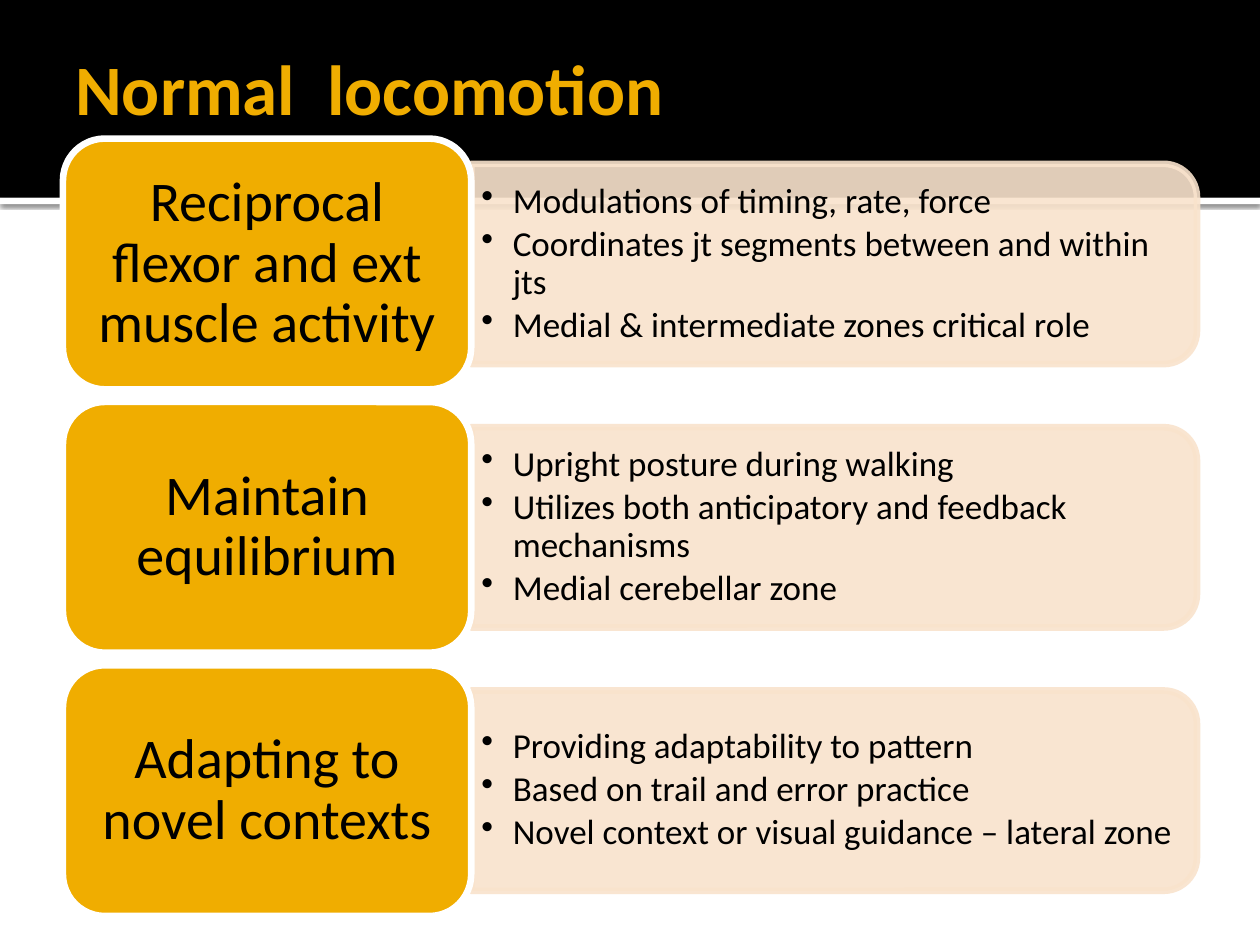
import pptx
import pptx.dml.color
import pptx.enum.shapes
import pptx.enum.text
import pptx.oxml
import pptx.oxml.ns
import pptx.util
from pptx.util import Inches

COLORS = {"black": "000000", "white": "FFFFFF", "gold": "F0AD00", "peach": "F9E3CC"}
SHAPES = pptx.enum.shapes.MSO_SHAPE
ALIGN = pptx.enum.text.PP_ALIGN
NAMESPACE = pptx.oxml.ns.nsdecls("a")
ROWS = [
    ("Reciprocal flexor and ext muscle activity",
     ["Modulations of timing, rate, force",
      "Coordinates jt segments between and within jts",
      "Medial & intermediate zones critical role"]),
    ("Maintain equilibrium",
     ["Upright posture during walking",
      "Utilizes both anticipatory and feedback mechanisms",
      "Medial cerebellar zone"]),
    ("Adapting to novel contexts",
     ["Providing adaptability to pattern",
      "Based on trail and error practice",
      "Novel context or visual guidance – lateral zone"]),
]


def rgb(name):
    """Return the named colour."""
    return pptx.dml.color.RGBColor.from_string(COLORS[name])


def write_text(shape, lines, *, size, insets, color="black", bold=False,
               align=ALIGN.LEFT, spacing=1.0, after=0, bullets=False):
    """Write one formatted paragraph per line into a shape."""
    frame = shape.text_frame
    frame.word_wrap = True
    frame.vertical_anchor = pptx.enum.text.MSO_ANCHOR.MIDDLE
    frame.margin_left, frame.margin_top, frame.margin_right, frame.margin_bottom = map(Inches, insets)
    for index, line in enumerate(lines):
        para = frame.add_paragraph() if index else frame.paragraphs[0]
        para.alignment = align
        para.line_spacing = spacing
        para.space_after = pptx.util.Pt(after)
        if bullets:
            para.level = 1
            properties = para._p.get_or_add_pPr()
            properties.set("marL", str(Inches(0.25)))
            properties.set("indent", str(Inches(-0.25)))
            properties.append(pptx.oxml.parse_xml(f'<a:buChar {NAMESPACE} char="•"/>'))
        span = para.add_run()
        span.text = line
        span.font.name = "Calibri"
        span.font.size = pptx.util.Pt(size)
        span.font.bold = bold
        span.font.color.rgb = rgb(color)


def add_box(slide, kind, left, top, width, height, fill, line=None):
    """Add a filled preset shape with no shadow and an optional outline."""
    box = slide.shapes.add_shape(kind, left, top, width, height)
    box.shadow.inherit = False
    box.fill.solid()
    box.fill.fore_color.rgb = rgb(fill)
    if line:
        box.line.color.rgb = rgb(line)
        box.line.width = pptx.util.Pt(3.78)
    else:
        box.line.fill.background()
    return box


def add_header(slide, left, top, width, height):
    """Draw the black title band, its shadowed white edge and the title."""
    edge = add_box(slide, SHAPES.RECTANGLE, left, top + height, width, Inches(0.05), "white")
    effects = edge._element.spPr.find(pptx.oxml.ns.qn("a:effectLst"))
    effects.append(pptx.oxml.parse_xml(
        f'<a:outerShdw {NAMESPACE} blurRad="{pptx.util.Pt(2.5)}" dist="{pptx.util.Pt(0.8)}" '
        f'dir="5400000" rotWithShape="0"><a:srgbClr val="{COLORS["black"]}">'
        '<a:alpha val="60000"/></a:srgbClr></a:outerShdw>'))
    add_box(slide, SHAPES.RECTANGLE, left, top, width, height, "black")
    title = slide.shapes.add_textbox(left + Inches(0.5), top + Inches(0.3),
                                     width - Inches(1), Inches(0.79))
    write_text(title, ["Normal  locomotion"], size=40.5, color="gold", bold=True,
               insets=(0.1, 0.05, 0.05, 0.05))


def add_panel(slide, left, top, width, height, points):
    """Draw a panel rounded on its right side, with bullet points over it."""
    panel = add_box(slide, SHAPES.ROUND_2_SAME_RECTANGLE,
                    left + (width - height) // 2, top + (height - width) // 2,
                    height, width, "peach", "peach")
    panel.rotation = 90
    for color in panel._element.spPr.iter(pptx.oxml.ns.qn("a:srgbClr")):
        color.append(pptx.oxml.parse_xml(f'<a:alpha {NAMESPACE} val="90000"/>'))
    inset = Inches(0.08)
    body = slide.shapes.add_textbox(left, top + inset, width - inset, height - 2 * inset)
    write_text(body, points, size=20, insets=(0.08, 0.04, 0.08, 0.04),
               spacing=0.9, after=3, bullets=True)


def add_row(slide, left, top, width, height, heading, points):
    """Draw a gold heading block beside its panel of points."""
    label_width = Inches(3.24)
    panel_height = Inches(1.59)
    add_panel(slide, left + label_width, top + (height - panel_height) // 2,
              width - label_width, panel_height, points)
    label = add_box(slide, SHAPES.ROUNDED_RECTANGLE, left, top, label_width, height,
                    "gold", "white")
    write_text(label, [heading], size=32, insets=(0.13, 0.07, 0.13, 0.07),
               align=ALIGN.CENTER, spacing=0.9)


def main():
    """Build and save the slide."""
    deck = pptx.Presentation()
    deck.slide_width, deck.slide_height = Inches(10), Inches(7.5)
    slide = deck.slides.add_slide(deck.slide_layouts[6])
    add_header(slide, 0, 0, deck.slide_width, Inches(1.57))
    for index, (heading, points) in enumerate(ROWS):
        add_row(slide, Inches(0.5), Inches(1.1) + index * Inches(2.09),
                Inches(9), Inches(1.99), heading, points)
    deck.save("out.pptx")


if __name__ == "__main__":
    main()
